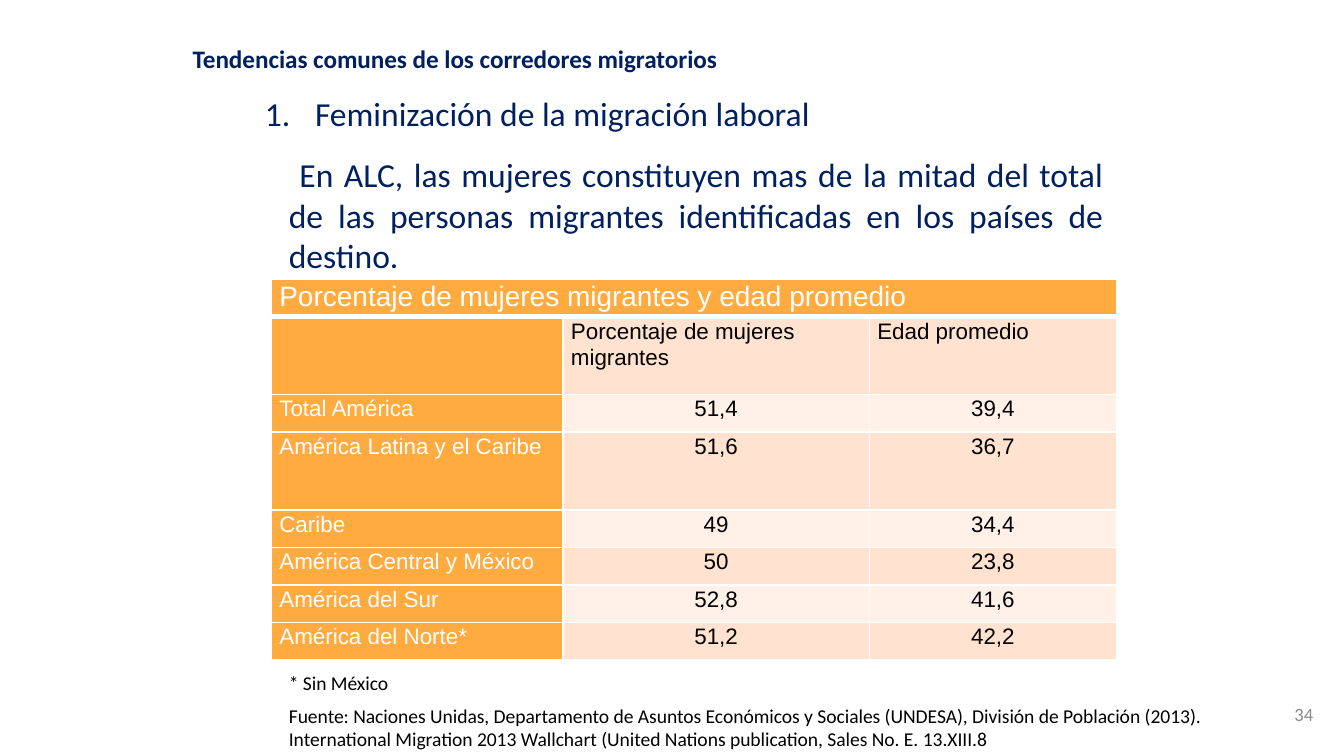
from dataclasses import dataclass

from lxml import etree
from pptx import Presentation
from pptx.dml.color import RGBColor
from pptx.enum.text import MSO_ANCHOR, MSO_AUTO_SIZE, PP_ALIGN
from pptx.oxml.ns import qn
from pptx.util import Cm, Pt

LEFT, CENTER, RIGHT, JUSTIFY = PP_ALIGN.LEFT, PP_ALIGN.CENTER, PP_ALIGN.RIGHT, PP_ALIGN.JUSTIFY
TOP, MIDDLE = MSO_ANCHOR.TOP, MSO_ANCHOR.MIDDLE
NO_AUTOFIT = MSO_AUTO_SIZE.NONE


@dataclass(frozen=True)
class Theme:
    navy: str = "002060"
    black: str = "000000"
    white: str = "FFFFFF"
    gray: str = "8C8C8C"
    orange: str = "FFAB40"
    bands: tuple = ("FFE2CF", "FFF1E8")
    text_font: str = "Calibri"
    table_font: str = "Arial"
    title_size: float = 13.5
    body_size: float = 18
    note_size: float = 10.5
    number_size: float = 10
    caption_size: float = 15
    cell_size: float = 12


class SlideBuilder:
    def __init__(self, prs, theme):
        self.theme = theme
        self.s = prs.slides.add_slide(prs.slide_layouts[1])

    def style(self, tf, size, color, font, align=LEFT, bold=False):
        for p in tf.paragraphs:
            p.alignment = align
            p.space_before = Pt(0)
            for r in p.runs:
                r.font.name = font
                r.font.size = Pt(size)
                r.font.bold = bold
                r.font.color.rgb = RGBColor.from_string(color)

    def fill_text(self, sp, box, text, size, color, align=LEFT, bold=False, wrap=True, anchor=TOP):
        sp.left, sp.top, sp.width, sp.height = (Cm(v) for v in box)
        tf = sp.text_frame
        tf.text = text
        tf.word_wrap = wrap
        tf.auto_size = NO_AUTOFIT
        tf.vertical_anchor = anchor
        self.style(tf, size, color, self.theme.text_font, align, bold)

    def title(self, box, text):
        t = self.theme
        self.fill_text(self.s.shapes.title, box, text, t.title_size, t.navy, CENTER, True, False)

    def numbered_list(self, box, text):
        t = self.theme
        sp = self.s.placeholders[1]
        self.fill_text(sp, box, text, t.body_size, t.navy, JUSTIFY)
        for p in sp.text_frame.paragraphs:
            pPr = p._p.get_or_add_pPr()
            pPr.set("marL", str(Cm(0.95)))
            pPr.set("indent", str(-Cm(0.95)))
            etree.SubElement(pPr, qn("a:buFont"), typeface="+mj-lt")
            etree.SubElement(pPr, qn("a:buAutoNum"), type="arabicPeriod")

    def text(self, box, text, size, color, **options):
        sp = self.s.shapes.add_textbox(*(Cm(v) for v in box))
        self.fill_text(sp, box, text, size, color, **options)

    def borders(self, cell, bottom):
        tcPr = cell._tc.get_or_add_tcPr()
        for side, width in (("L", 1), ("R", 1), ("T", 1), ("B", bottom)):
            line = etree.SubElement(tcPr, qn(f"a:ln{side}"), w=str(Pt(width)))
            fill = etree.SubElement(line, qn("a:solidFill"))
            etree.SubElement(fill, qn("a:srgbClr"), val=self.theme.white)

    def cell(self, cell, text, fill, size, color, align, bottom):
        self.borders(cell, bottom)
        cell.fill.solid()
        cell.fill.fore_color.rgb = RGBColor.from_string(fill)
        cell.margin_left = cell.margin_right = Cm(0.15)
        cell.margin_top = cell.margin_bottom = 0
        cell.text_frame.text = text
        cell.text_frame.paragraphs[0].line_spacing = 1.07
        self.style(cell.text_frame, size, color, self.theme.table_font, align)

    def table(self, left, top, widths, heights, rows):
        t = self.theme
        frame = self.s.shapes.add_table(len(rows), len(widths), Cm(left), Cm(top),
                                        Cm(sum(widths)), Cm(sum(heights)))
        table = frame.table
        for column, width in zip(table.columns, widths):
            column.width = Cm(width)
        for row, height in zip(table.rows, heights):
            row.height = Cm(height)
        for i, values in enumerate(rows):
            for j, value in enumerate(values):
                caption = i == 0
                heading = caption or j == 0
                self.cell(
                    table.cell(i, j), value,
                    fill=t.orange if heading else t.bands[(i - 1) % 2],
                    size=t.caption_size if caption else t.cell_size,
                    color=t.white if heading else t.black,
                    align=CENTER if i > 1 and j > 0 else LEFT,
                    bottom=3 if caption else 1,
                )
        table.cell(0, 0).merge(table.cell(0, len(widths) - 1))


def main():
    prs = Presentation()
    prs.slide_width, prs.slide_height = Cm(25.4), Cm(14.29)
    theme = Theme()
    slide = SlideBuilder(prs, theme)

    # Heading and main point
    slide.title((3.33, 0.69, 10.54, 0.84), "Tendencias comunes de los corredores migratorios")
    slide.numbered_list((4.75, 1.63, 15.9, 1.02), "Feminización de la migración laboral")
    slide.text((5.21, 2.79, 15.9, 2.57),
               " En ALC, las mujeres constituyen mas de la mitad del total de las personas "
               "migrantes identificadas en los países de destino.",
               theme.body_size, theme.navy, align=JUSTIFY)

    # Share of women and average age by region
    short, tall = 0.71, 1.47
    rows = [
        ("Porcentaje de mujeres migrantes y edad promedio", "", ""),
        ("", "Porcentaje de mujeres migrantes", "Edad promedio"),
        ("Total América", "51,4", "39,4"),
        ("América Latina y el Caribe", "51,6", "36,7"),
        ("Caribe", "49", "34,4"),
        ("América Central y México", "50", "23,8"),
        ("América del Sur", "52,8", "41,6"),
        ("América del Norte*", "51,2", "42,2"),
    ]
    heights = [tall if i in (1, 3) else short for i in range(len(rows))]
    slide.table(5.13, 5.28, (5.51, 5.79, 4.67), heights, rows)

    # Notes and slide number
    slide.text((5.21, 12.55, 2.44, 0.71), "* Sin México", theme.note_size, theme.black, wrap=False)
    slide.text((5.21, 13.18, 18.08, 1.14),
               "Fuente: Naciones Unidas, Departamento de Asuntos Económicos y Sociales (UNDESA), "
               "División de Población (2013).\n"
               "International Migration 2013 Wallchart (United Nations publication, "
               "Sales No. E. 13.XIII.8",
               theme.note_size, theme.black, wrap=False)
    slide.text((23.55, 12.95, 1.52, 1.09), "34", theme.number_size, theme.gray,
               align=RIGHT, anchor=MIDDLE)

    prs.save("out.pptx")


if __name__ == "__main__":
    main()
